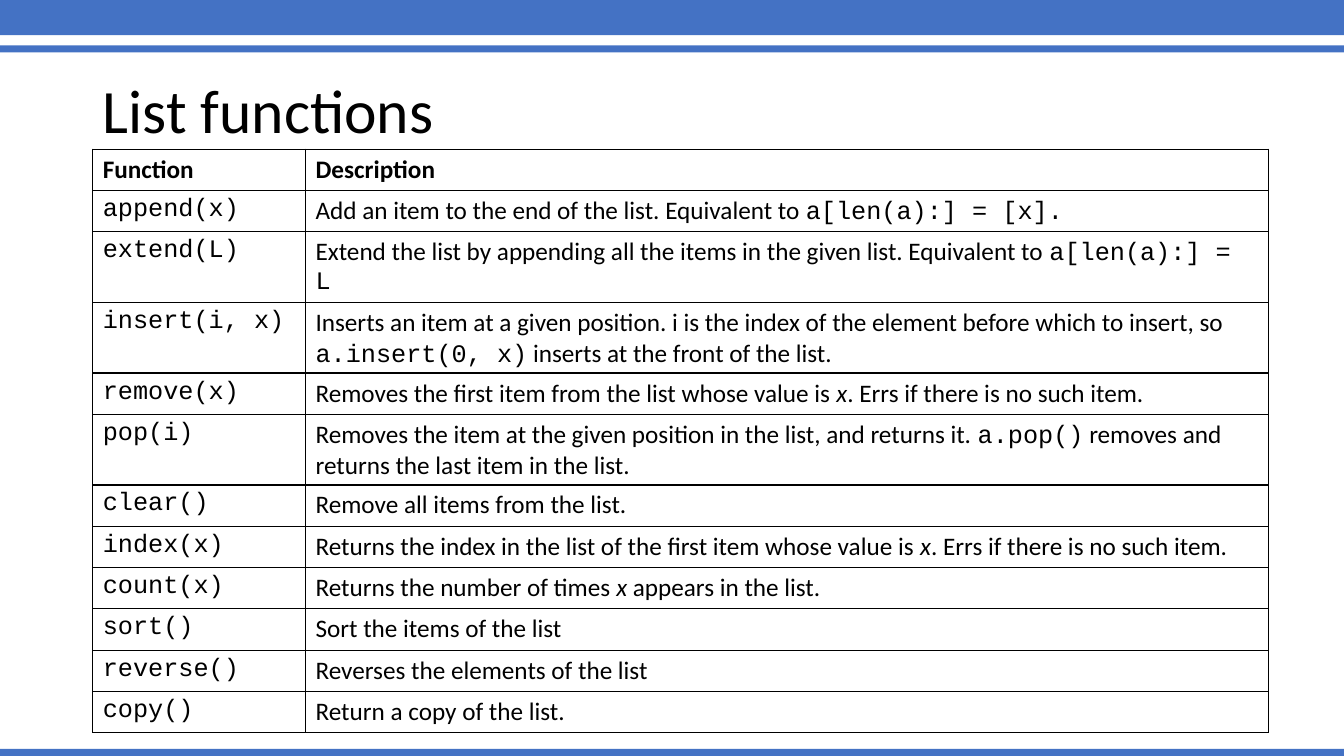
"""Build the slide that tabulates the list functions."""
from dataclasses import dataclass

from lxml.etree import SubElement
from pptx import Presentation
from pptx.dml.color import RGBColor
from pptx.enum.shapes import MSO_SHAPE
from pptx.enum.text import MSO_ANCHOR
from pptx.oxml.ns import qn
from pptx.slide import Slide
from pptx.table import _Cell
from pptx.text.text import _Paragraph
from pptx.util import Emu, Pt

EMU_PER_PX = 9144
SLIDE_WIDTH, SLIDE_HEIGHT = 1333, 750
BLUE = RGBColor(0x44, 0x72, 0xC4)
BLACK = RGBColor(0x00, 0x00, 0x00)
WHITE = RGBColor(0xFF, 0xFF, 0xFF)
BODY_FONT, CODE_FONT = "Calibri", "Courier New"
TABLE_LEFT, TABLE_TOP = 92, 148
COLUMN_WIDTHS = (211, 955)
ROW_HEIGHT = 41
BORDER_WIDTH = Pt(1)


@dataclass(frozen=True)
class Band:
    """A full-width stripe."""
    top: int
    height: int


@dataclass(frozen=True)
class Span:
    """A stretch of text in one format."""
    text: str
    font: str = BODY_FONT
    bold: bool = False
    italic: bool = False


@dataclass(frozen=True)
class FunctionRow:
    """A list function and its description."""
    name: Span
    description: tuple[Span, ...]


def code(text: str) -> Span:
    """Return a span in the code font."""
    return Span(text, font=CODE_FONT)


def function(name: str, *description: Span) -> FunctionRow:
    """Return a row whose name is in the code font."""
    return FunctionRow(code(name), description)


BANDS = (Band(-3, 38), Band(45, 7), Band(743, 7))
VALUE_X = Span("x", italic=True)
NO_SUCH_ITEM = Span(". Errs if there is no such item.")
ROWS = (
    FunctionRow(Span("Function", bold=True), (Span("Description", bold=True),)),
    function("append(x)",
             Span("Add an item to the end of the list. Equivalent to "),
             code("a[len(a):] = [x].")),
    function("extend(L)",
             Span("Extend the list by appending all the items in the given list. "
                  "Equivalent to "),
             code("a[len(a):] = L")),
    function("insert(i, x)",
             Span("Inserts an item at a given position. i is the index of the "
                  "element before which to insert, so "),
             code("a.insert(0, x)"),
             Span(" inserts at the front of the list.")),
    function("remove(x)",
             Span("Removes the first item from the list whose value is "),
             VALUE_X, NO_SUCH_ITEM),
    function("pop(i)",
             Span("Removes the item at the given position in the list, "
                  "and returns it. "),
             code("a.pop()"),
             Span(" removes and returns the last item in the list.")),
    function("clear()", Span("Remove all items from the list. ")),
    function("index(x)",
             Span("Returns the index in the list of the first item whose value is "),
             VALUE_X, NO_SUCH_ITEM),
    function("count(x)", Span("Returns the number of times "), VALUE_X,
             Span(" appears in the list.")),
    function("sort()", Span("Sort the items of the list")),
    function("reverse()", Span("Reverses the elements of the list")),
    function("copy()", Span("Return a copy of the list.")),
)


def px(length: int) -> Emu:
    """Convert px to EMU."""
    return Emu(length * EMU_PER_PX)


def add_text(paragraph: _Paragraph, text: str, *, size: int, font: str = BODY_FONT,
             bold: bool = False, italic: bool = False) -> None:
    """Append a formatted run to a paragraph."""
    run = paragraph.add_run()
    run.text = text
    run.font.name = font
    run.font.size = Pt(size)
    run.font.bold = bold
    run.font.italic = italic
    run.font.color.rgb = BLACK


def draw_band(slide: Slide, band: Band) -> None:
    """Draw a stripe across the slide."""
    stripe = slide.shapes.add_shape(MSO_SHAPE.RECTANGLE, px(0), px(band.top),
                                    px(SLIDE_WIDTH), px(band.height))
    stripe.shadow.inherit = False
    stripe.fill.solid()
    stripe.fill.fore_color.rgb = BLUE
    stripe.line.fill.background()


def draw_title(slide: Slide) -> None:
    """Draw the slide title."""
    title = slide.shapes.add_textbox(px(92), px(40), px(1150), px(145)).text_frame
    title.word_wrap = True
    title.vertical_anchor = MSO_ANCHOR.MIDDLE
    title.paragraphs[0].line_spacing = 0.9
    add_text(title.paragraphs[0], "List functions", size=44)


def fill_cell(cell: _Cell, spans: tuple[Span, ...]) -> None:
    """Write the spans in a white cell with black borders."""
    for span in spans:
        add_text(cell.text_frame.paragraphs[0], span.text, size=18, font=span.font,
                 bold=span.bold, italic=span.italic)
    properties = cell._tc.get_or_add_tcPr()
    for side in ("a:lnL", "a:lnR", "a:lnT", "a:lnB"):
        border = SubElement(properties, qn(side), w=str(BORDER_WIDTH))
        paint = SubElement(border, qn("a:solidFill"))
        SubElement(paint, qn("a:srgbClr"), val=str(BLACK))
    cell.fill.solid()
    cell.fill.fore_color.rgb = WHITE


def draw_table(slide: Slide) -> None:
    """Draw the table of functions."""
    table = slide.shapes.add_table(
        len(ROWS), len(COLUMN_WIDTHS), px(TABLE_LEFT), px(TABLE_TOP),
        px(sum(COLUMN_WIDTHS)), px(ROW_HEIGHT * len(ROWS))).table
    table.first_row = False
    table.horz_banding = False
    for column, width in zip(table.columns, COLUMN_WIDTHS):
        column.width = px(width)
    for index, row in enumerate(ROWS):
        fill_cell(table.cell(index, 0), (row.name,))
        fill_cell(table.cell(index, 1), row.description)


def main() -> None:
    """Build and save the presentation."""
    presentation = Presentation()
    presentation.slide_width = px(SLIDE_WIDTH)
    presentation.slide_height = px(SLIDE_HEIGHT)
    slide = presentation.slides.add_slide(presentation.slide_layouts[6])
    for band in BANDS:
        draw_band(slide, band)
    draw_title(slide)
    draw_table(slide)
    presentation.save("out.pptx")


if __name__ == "__main__":
    main()
